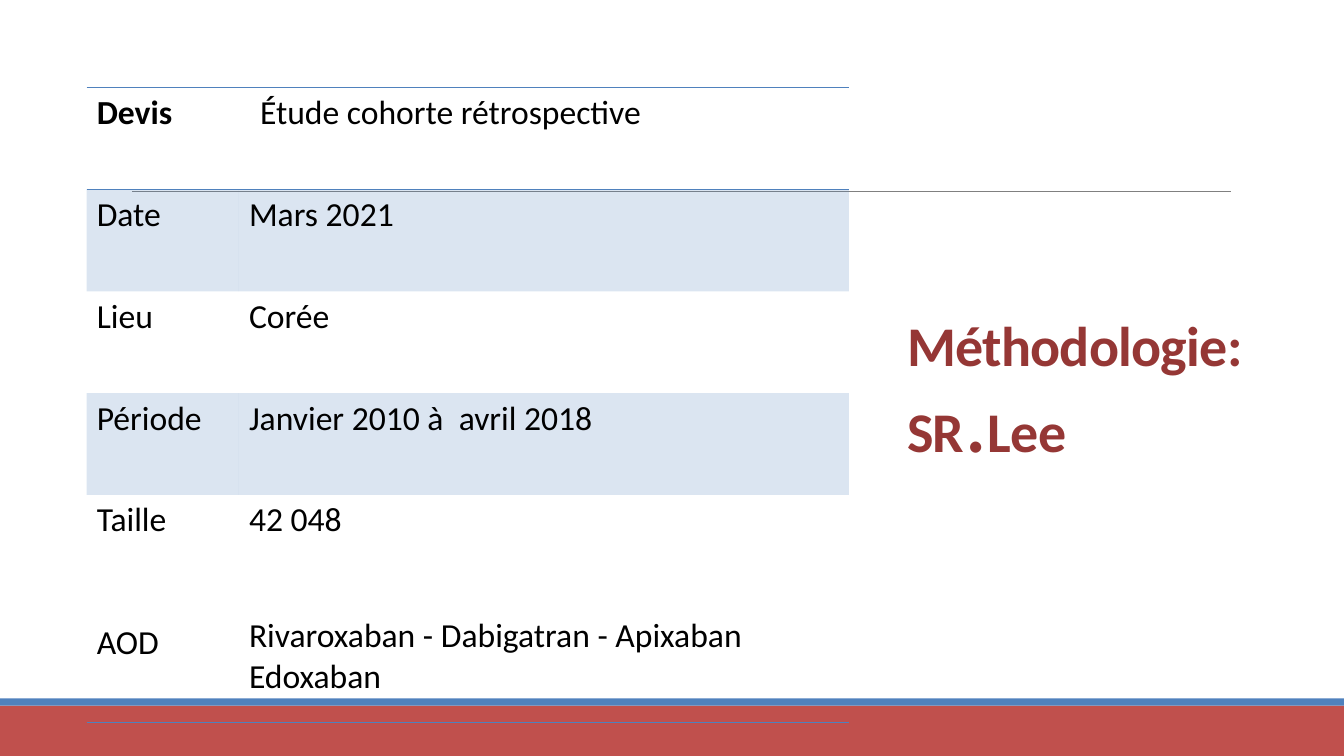
import pptx
import pptx.util
import pptx.dml.color
import pptx.enum.shapes
import pptx.enum.text
import pptx.oxml
import pptx.oxml.ns
from lxml import etree

Inches = pptx.util.Inches
Pt = pptx.util.Pt
RGBColor = pptx.dml.color.RGBColor
qn = pptx.oxml.ns.qn

BLUE = RGBColor(0x4F, 0x81, 0xBD)
RED = RGBColor(0xC0, 0x50, 0x4D)
DARK_RED = RGBColor(0x95, 0x37, 0x35)
GREY = RGBColor(0x80, 0x80, 0x80)
BLACK = RGBColor(0, 0, 0)
FONT = "Calibri"
PLAIN_TABLE = "{2D5ABB26-0587-4C30-8999-92F81FD0307C}"

STUDY_ROWS = [
    (["Devis"], ["Étude cohorte rétrospective"]),
    (["Date"], ["Mars 2021"]),
    (["Lieu"], ["Corée"]),
    (["Période"], ["Janvier 2010 à  avril 2018"]),
    (["Taille", "AOD"],
     ["42\u00a0048", "Rivaroxaban - Dabigatran - Apixaban", "Edoxaban"]),
]
DRUG_GAPS = (58.6, 53.7)


def write_text(para, text, size=24, color=BLACK, bold=False, spacing=None):
    span = para.add_run()
    span.text = text
    span.font.name = FONT
    span.font.size = Pt(size)
    span.font.bold = bold
    span.font.color.rgb = color
    if spacing is not None:
        span.font._element.set("spc", str(int(spacing * 100)))


class SlideBuilder:
    def __init__(self, page):
        self.page = page

    def bar(self, top, height, color):
        shape = self.page.shapes.add_shape(
            pptx.enum.shapes.MSO_SHAPE.RECTANGLE,
            Inches(0), Inches(top), Inches(13.33), Inches(height))
        shape.shadow.inherit = False
        shape.fill.solid()
        shape.fill.fore_color.rgb = color
        shape.line.fill.background()

    def rule(self, left, right, height):
        line = self.page.shapes.add_connector(
            pptx.enum.shapes.MSO_CONNECTOR.STRAIGHT,
            Inches(left), Inches(height), Inches(right), Inches(height))
        line.line.color.rgb = GREY
        line.line.width = Pt(0.5)
        etree.SubElement(line._element.spPr, qn("a:effectLst"))

    def title(self, left, top, width, height):
        box = self.page.shapes.add_textbox(
            Inches(left), Inches(top), Inches(width), Inches(height))
        frame = box.text_frame
        frame.word_wrap = True
        frame.vertical_anchor = pptx.enum.text.MSO_ANCHOR.BOTTOM
        para = frame.paragraphs[0]
        para.line_spacing = 0.85
        style = dict(color=DARK_RED, spacing=-0.5)
        write_text(para, "Méthodologie:", size=40, bold=True, **style)
        para.add_line_break()
        write_text(para, "SR", size=40, bold=True, **style)
        write_text(para, ".", size=66, **style)
        write_text(para, "Lee", size=40, bold=True, **style)

    def border(self, cell, side):
        line = etree.SubElement(cell._tc.get_or_add_tcPr(), qn(f"a:{side}"), w="12700")
        fill = etree.SubElement(line, qn("a:solidFill"))
        etree.SubElement(fill, qn("a:srgbClr"), val=str(BLUE))

    def cell(self, cell, lines, sides, shaded, gap):
        for side in sides:
            self.border(cell, side)
        if shaded:
            cell.fill.solid()
            cell.fill.fore_color.rgb = BLUE
            color = cell._tc.tcPr.find(qn("a:solidFill")).find(qn("a:srgbClr"))
            etree.SubElement(color, qn("a:alpha"), val="20000")
        else:
            cell.fill.background()
        frame = cell.text_frame
        for index, text in enumerate(lines):
            para = frame.paragraphs[0] if index == 0 else frame.add_paragraph()
            if index == 1:
                para.space_before = Pt(gap)
            write_text(para, text, bold=text == "Devis")

    def study_table(self, left, top, widths, heights):
        table = self.page.shapes.add_table(
            len(heights), len(widths), Inches(left), Inches(top),
            Inches(sum(widths)), Inches(sum(heights))).table
        table.first_row = False
        table.horz_banding = False
        table._tbl.tblPr.find(qn("a:tableStyleId")).text = PLAIN_TABLE
        for column, width in zip(table.columns, widths):
            column.width = Inches(width)
        for row, height in zip(table.rows, heights):
            row.height = Inches(height)
        borders = {0: ("lnT", "lnB"), len(heights) - 1: ("lnB",)}
        for row, entries in enumerate(STUDY_ROWS):
            for column, lines in enumerate(entries):
                self.cell(table.cell(row, column), lines, borders.get(row, ()),
                          row % 2 == 1, DRUG_GAPS[column])
        table.cell(0, 1).margin_left = Inches(0.21)


def main():
    deck = pptx.Presentation()
    deck.slide_width = Inches(13.33)
    deck.slide_height = Inches(7.5)
    builder = SlideBuilder(deck.slides.add_slide(deck.slide_layouts[6]))
    builder.bar(7, 0.5, RED)
    builder.bar(6.93, 0.07, BLUE)
    builder.rule(1.31, 12.21, 1.9)
    builder.title(8.9, 0.7, 3.72, 4.03)
    builder.study_table(0.86, 0.87, [1.51, 6.05], [1.01] * 4 + [2.26])
    deck.save("out.pptx")


if __name__ == "__main__":
    main()
